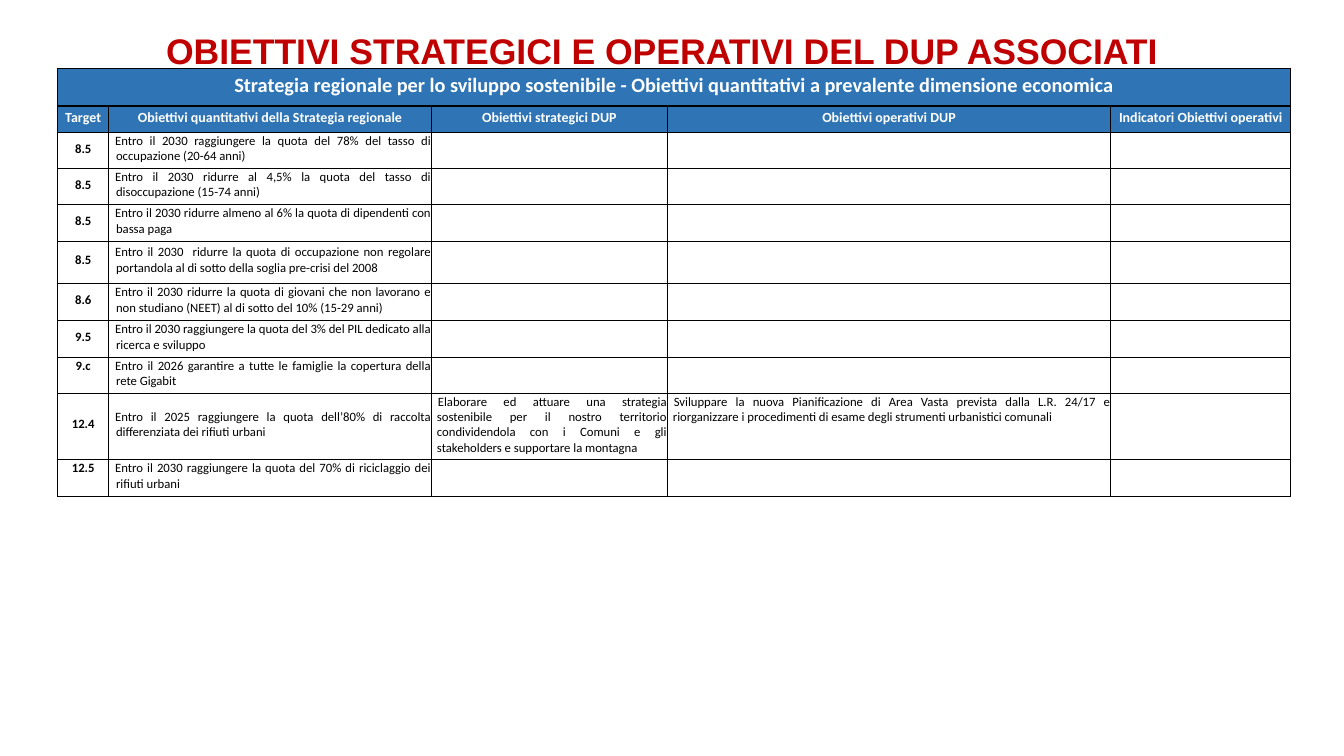
import dataclasses

import lxml.etree
import pptx
import pptx.dml.color
import pptx.enum.text
import pptx.oxml.ns
import pptx.util

Inches = pptx.util.Inches
Align = pptx.enum.text.PP_ALIGN
Anchor = pptx.enum.text.MSO_ANCHOR


@dataclasses.dataclass(frozen=True)
class Theme:
    title_font: str = "Arial"
    table_font: str = "Calibri"
    red: str = "C00000"
    blue: str = "2F75B5"
    white: str = "FFFFFF"
    black: str = "000000"
    title_size: int = 28
    banner_size: int = 16
    header_size: int = 11
    body_size: int = 10
    border_width: int = 1


TITLE = "OBIETTIVI STRATEGICI E OPERATIVI DEL DUP ASSOCIATI"
BANNER = "Strategia regionale per lo sviluppo sostenibile - Obiettivi quantitativi a prevalente dimensione economica"
HEADERS = [
    "Target",
    "Obiettivi quantitativi della Strategia regionale",
    "Obiettivi strategici DUP",
    "Obiettivi operativi DUP",
    "Indicatori Obiettivi operativi",
]
GOALS = [
    ("8.5", "Entro il 2030 raggiungere la quota del 78% del tasso di occupazione (20-64 anni)"),
    ("8.5", "Entro il 2030 ridurre al 4,5% la quota del tasso di disoccupazione (15-74 anni)"),
    ("8.5", "Entro il 2030 ridurre almeno al 6% la quota di dipendenti con bassa paga"),
    ("8.5", "Entro il 2030  ridurre la quota di occupazione non regolare portandola al di sotto della soglia pre-crisi del 2008"),
    ("8.6", "Entro il 2030 ridurre la quota di giovani che non lavorano e non studiano (NEET) al di sotto del 10% (15-29 anni)"),
    ("9.5", "Entro il 2030 raggiungere la quota del 3% del PIL dedicato alla ricerca e sviluppo"),
    ("9.c", "Entro il 2026 garantire a tutte le famiglie la copertura della rete Gigabit"),
    (
        "12.4",
        "Entro il 2025 raggiungere la quota dell’80% di raccolta differenziata dei rifiuti urbani",
        "Elaborare ed attuare una strategia sostenibile per il nostro territorio condividendola con i Comuni e gli stakeholders e supportare la montagna",
        "Sviluppare la nuova Pianificazione di Area Vasta prevista dalla L.R. 24/17 e riorganizzare i procedimenti di esame degli strumenti urbanistici comunali",
    ),
    ("12.5", "Entro il 2030 raggiungere la quota del 70% di riciclaggio dei rifiuti urbani"),
]
TOP_TARGETS = {"9.c", "12.5"}
COLUMN_WIDTHS = [0.56, 3.53, 2.58, 4.85, 1.97]
ROW_HEIGHTS = [0.41, 0.29, 0.39, 0.39, 0.4, 0.46, 0.41, 0.4, 0.39, 0.7, 0.4]


def write_text(text_frame, text, *, font, size, color, bold=False, align=Align.CENTER,
               left_indent=0, first_indent=0, line_spacing=None, space_after=None):
    paragraph = text_frame.paragraphs[0]
    paragraph.alignment = align
    if line_spacing:
        paragraph.line_spacing = line_spacing
    if space_after:
        paragraph.space_after = pptx.util.Pt(space_after)
    if left_indent:
        properties = paragraph._p.get_or_add_pPr()
        properties.set("marL", str(Inches(left_indent)))
        properties.set("indent", str(Inches(first_indent)))
    run = paragraph.add_run()
    run.text = text
    run.font.name = font
    run.font.size = pptx.util.Pt(size)
    run.font.bold = bold
    run.font.color.rgb = pptx.dml.color.RGBColor.from_string(color)


class SlideBuilder:
    def __init__(self, slide, theme):
        self.slide = slide
        self.theme = theme

    def title(self, text, left, top, width, height):
        shape = self.slide.shapes.add_textbox(Inches(left), Inches(top), Inches(width), Inches(height))
        text_frame = shape.text_frame
        text_frame.word_wrap = True
        text_frame.margin_right = Inches(0.32)
        write_text(text_frame, text, font=self.theme.title_font, size=self.theme.title_size,
                   color=self.theme.red, bold=True, line_spacing=1.5, space_after=6)

    def table(self, left, top, column_widths, row_heights):
        frame = self.slide.shapes.add_table(
            len(row_heights), len(column_widths), Inches(left), Inches(top),
            Inches(sum(column_widths)), Inches(sum(row_heights)))
        table = frame.table
        table.first_row = False
        table.horz_banding = False
        for column, width in zip(table.columns, column_widths):
            column.width = Inches(width)
        for row, height in zip(table.rows, row_heights):
            row.height = Inches(height)
            for cell in row.cells:
                self.prepare_cell(cell)
        return table

    def prepare_cell(self, cell):
        cell.margin_left = cell.margin_right = cell.margin_top = Inches(0.01)
        cell.margin_bottom = Inches(0.05)
        properties = cell._tc.get_or_add_tcPr()
        qn = pptx.oxml.ns.qn
        for side in ("a:lnL", "a:lnR", "a:lnT", "a:lnB"):
            line = lxml.etree.SubElement(properties, qn(side), w=str(pptx.util.Pt(self.theme.border_width)))
            fill = lxml.etree.SubElement(line, qn("a:solidFill"))
            lxml.etree.SubElement(fill, qn("a:srgbClr"), val=self.theme.black)
        cell.fill.background()

    def header_cell(self, cell, text, size):
        cell.fill.solid()
        cell.fill.fore_color.rgb = pptx.dml.color.RGBColor.from_string(self.theme.blue)
        cell.vertical_anchor = Anchor.MIDDLE
        write_text(cell.text_frame, text, font=self.theme.table_font, size=size,
                   color=self.theme.white, bold=True)

    def body_cell(self, cell, text, anchor, **text_format):
        cell.vertical_anchor = anchor
        write_text(cell.text_frame, text, font=self.theme.table_font, size=self.theme.body_size,
                   color=self.theme.black, **text_format)


def main():
    presentation = pptx.Presentation()
    presentation.slide_width = Inches(14.7)
    presentation.slide_height = Inches(8.27)
    theme = Theme()
    builder = SlideBuilder(presentation.slides.add_slide(presentation.slide_layouts[6]), theme)

    builder.title(TITLE, 0.01, 0.03, 14.68, 0.72)
    table = builder.table(0.63, 0.75, COLUMN_WIDTHS, ROW_HEIGHTS)
    table.cell(0, 0).merge(table.cell(0, len(HEADERS) - 1))
    builder.header_cell(table.cell(0, 0), BANNER, theme.banner_size)
    for column, header in enumerate(HEADERS):
        builder.header_cell(table.cell(1, column), header, theme.header_size)

    for row, (target, goal, *actions) in enumerate(GOALS, start=2):
        target_anchor = Anchor.TOP if target in TOP_TARGETS else Anchor.MIDDLE
        builder.body_cell(table.cell(row, 0), target, target_anchor, bold=True)
        builder.body_cell(table.cell(row, 1), goal, Anchor.MIDDLE, align=Align.JUSTIFY,
                          left_indent=0.07, first_indent=-0.01)
        for column, action in enumerate(actions, start=2):
            builder.body_cell(table.cell(row, column), action, Anchor.TOP, align=Align.JUSTIFY,
                              left_indent=0.05, first_indent=0.01)

    presentation.save("out.pptx")


if __name__ == "__main__":
    main()
